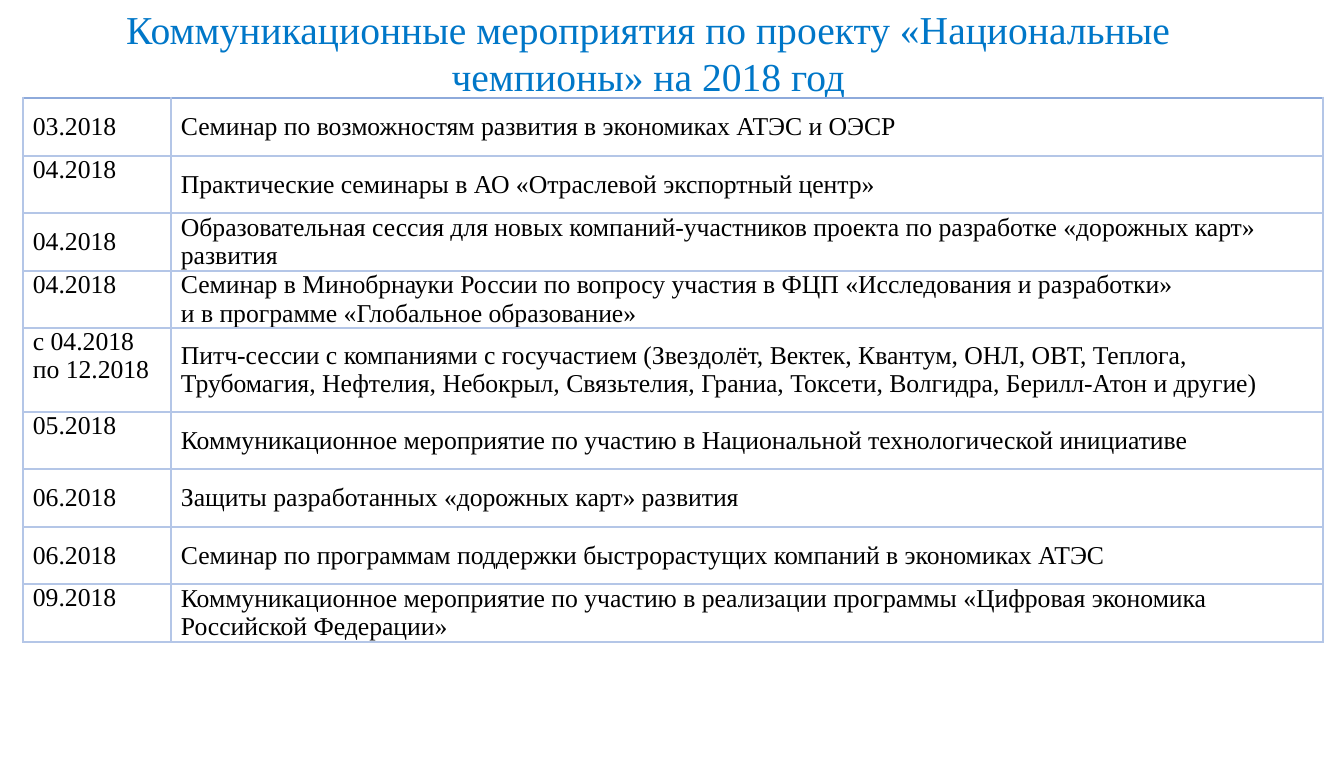
from dataclasses import dataclass

from lxml import etree
from pptx import Presentation
from pptx import util as u
from pptx.dml.color import RGBColor
from pptx.enum import text
from pptx.oxml import ns

FONT = "Times New Roman"
TITLE_BLUE, BLACK = "0077C8", "000000"
GRID_BLUE, TOP_BLUE = "B4C6E7", "8EAADB"
MIDDLE, TOP = text.MSO_ANCHOR.MIDDLE, text.MSO_ANCHOR.TOP
DATE_WIDTH, EVENT_WIDTH = 148, 1152
LINE_HEIGHT = 28


@dataclass(frozen=True)
class Event:
    date: str
    name: str
    date_anchor: text.MSO_ANCHOR = MIDDLE
    lines: int = 2


EVENTS = [
    Event("03.2018", "Семинар по возможностям развития в экономиках АТЭС и ОЭСР"),
    Event("04.2018", "Практические семинары в АО «Отраслевой экспортный центр»", TOP),
    Event("04.2018", "Образовательная сессия для новых компаний-участников проекта "
          "по разработке «дорожных карт» развития"),
    Event("04.2018", "Семинар в Минобрнауки России по вопросу участия в ФЦП "
          "«Исследования и разработки» \vи в программе «Глобальное образование»", TOP),
    Event("с 04.2018\nпо 12.2018", "Питч-сессии с компаниями с госучастием "
          "(Звездолёт, Вектек, Квантум, ОНЛ, ОВТ, Теплога, Трубомагия, Нефтелия, "
          "Небокрыл, Связьтелия, Граниа, Токсети, Волгидра, Берилл-Атон и другие)", TOP, 3),
    Event("05.2018", "Коммуникационное мероприятие по участию "
          "в Национальной технологической инициативе", TOP),
    Event("06.2018", "Защиты разработанных «дорожных карт» развития"),
    Event("06.2018", "Семинар по программам поддержки быстрорастущих компаний "
          "в экономиках АТЭС"),
    Event("09.2018", "Коммуникационное мероприятие по участию в реализации программы "
          "«Цифровая экономика Российской Федерации»", TOP),
]


def px(length: int) -> u.Emu:
    return u.Emu(round(length * 914400 / 142.2))


def rgb(value: str) -> RGBColor:
    return RGBColor.from_string(value)


def format_runs(frame, size: int, color: str) -> None:
    for paragraph in frame.paragraphs:
        for run in paragraph.runs:
            run.font.name = FONT
            run.font.size = u.Pt(size)
            run.font.bold = False
            run.font.color.rgb = rgb(color)


def add_border(cell, side: str, color: str, width: float) -> None:
    properties = cell._tc.get_or_add_tcPr()
    line = etree.SubElement(properties, ns.qn(f"a:ln{side}"), w=str(u.Pt(width)))
    fill = etree.SubElement(line, ns.qn("a:solidFill"))
    etree.SubElement(fill, ns.qn("a:srgbClr"), val=color)


def fill_cell(cell, content: str, anchor: text.MSO_ANCHOR, is_first_row: bool) -> None:
    cell.text_frame.text = content
    format_runs(cell.text_frame, 13, BLACK)
    cell.vertical_anchor = anchor
    cell.margin_left = cell.margin_right = px(10)
    cell.margin_top = cell.margin_bottom = 0
    for side in "LRTB":
        if side == "T" and is_first_row:
            add_border(cell, side, TOP_BLUE, 1.5)
        else:
            add_border(cell, side, GRID_BLUE, 1)
    cell.fill.background()


def add_title(slide) -> None:
    title = slide.shapes.title
    title.left, title.top, title.width, title.height = px(44), 0, px(1209), px(104)
    frame = title.text_frame
    frame.text = "Коммуникационные мероприятия по проекту «Национальные чемпионы» на 2018 год"
    frame.margin_left = frame.margin_right = frame.margin_top = frame.margin_bottom = 0
    frame.auto_size = text.MSO_AUTO_SIZE.NONE
    frame.word_wrap = True
    frame.vertical_anchor = MIDDLE
    frame.paragraphs[0].alignment = text.PP_ALIGN.CENTER
    format_runs(frame, 20, TITLE_BLUE)


def add_schedule(slide) -> None:
    # Two-line rows alternate by a pixel to average 57.5.
    heights = [event.lines * LINE_HEIGHT + (0 if event.lines > 2 else 2 - index % 2)
               for index, event in enumerate(EVENTS)]
    schedule = slide.shapes.add_table(
        len(EVENTS), 2, px(23), px(98), px(DATE_WIDTH + EVENT_WIDTH), px(sum(heights))).table
    schedule.first_row = schedule.horz_banding = False
    for column, width in zip(schedule.columns, (DATE_WIDTH, EVENT_WIDTH)):
        column.width = px(width)
    for index, (event, height) in enumerate(zip(EVENTS, heights)):
        schedule.rows[index].height = px(height)
        fill_cell(schedule.cell(index, 0), event.date, event.date_anchor, index == 0)
        fill_cell(schedule.cell(index, 1), event.name, MIDDLE, index == 0)


def main() -> None:
    deck = Presentation()
    deck.slide_width, deck.slide_height = px(1344), px(757)
    slide = deck.slides.add_slide(deck.slide_layouts.get_by_name("Title Only"))
    add_title(slide)
    add_schedule(slide)
    deck.save("out.pptx")


if __name__ == "__main__":
    main()
